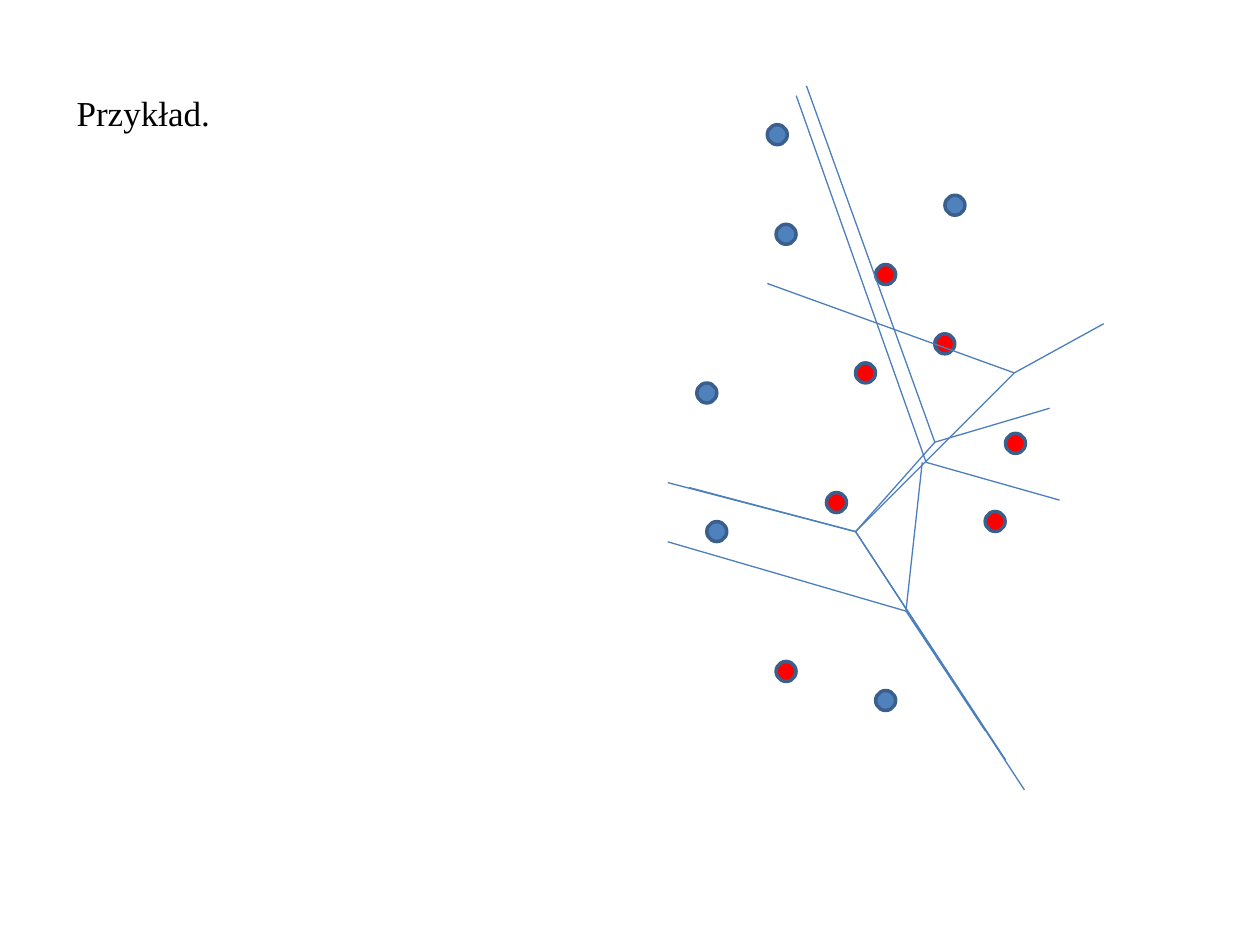
from lxml.etree import SubElement
from pptx import Presentation
from pptx.dml.color import RGBColor
from pptx.enum.shapes import MSO_CONNECTOR, MSO_SHAPE
from pptx.oxml.ns import qn
from pptx.util import Pt

BLACK = RGBColor(0x00, 0x00, 0x00)
BLUE = RGBColor(0x4F, 0x81, 0xBD)
RED = RGBColor(0xFF, 0x00, 0x00)
OUTLINE = RGBColor(0x3A, 0x5F, 0x8C)
EDGE = RGBColor(0x4B, 0x7E, 0xBC)
DOT = 11.4

BLUE_DOTS = [(438.5, 71.3), (443.5, 128.2), (398.2, 218.9),
             (403.9, 298.1), (540, 111.6), (500.4, 394.6)]
LOWER_RED_DOTS = [(443.5, 378), (472.3, 281.5), (574.6, 247.7), (563, 292.3)]
UPPER_RED_DOTS = [(488.9, 207.4), (500.4, 151.2), (534.2, 190.8)]

# Nodes where the edges of the diagrams meet
LOW = (517.7, 349.2)
CENTRE = (529.2, 264.2)
LEFT = (488.9, 303.8)
MIDDLE = (534.2, 252.7)
RIGHT = (579.6, 213.1)

FIRST_DIAGRAM = [
    ((605.5, 285.8), CENTRE),
    ((527, 264.2), LOW),
    (LOW, (381.6, 309.6)),
    ((455, 54.7), CENTRE),
    (LOW, (563, 417.6)),
]
SECOND_DIAGRAM = [
    (MIDDLE, (460.8, 49)),
    ((599.8, 233.3), MIDDLE),
    (LEFT, (393.8, 278.6)),
    ((574.6, 434.2), LEFT),
    (MIDDLE, LEFT),
]
THIRD_DIAGRAM = [
    ((630.7, 185), RIGHT),
    (LEFT, (381.6, 275.8)),
    (LEFT, (585.4, 451.4)),
    (LEFT, RIGHT),
    (RIGHT, (438.5, 162)),
]


def add_dots(shapes, corners, color):
    for x, y in corners:
        sp = shapes.add_shape(MSO_SHAPE.OVAL, Pt(x), Pt(y), Pt(DOT), Pt(DOT))
        sp.shadow.inherit = False
        sp.fill.solid()
        sp.fill.fore_color.rgb = color
        sp.line.color.rgb = OUTLINE
        sp.line.width = Pt(2)


def add_diagram(shapes, edges):
    """Draw the edges as one group of straight lines."""
    group = shapes.add_group_shape()
    for (x1, y1), (x2, y2) in edges:
        line = group.shapes.add_connector(
            MSO_CONNECTOR.STRAIGHT, Pt(x1), Pt(y1), Pt(x2), Pt(y2))
        line.line.color.rgb = EDGE
        line.line.width = Pt(0.75)
        SubElement(line._element.spPr, qn("a:effectLst"))


prs = Presentation()
prs.slide_width, prs.slide_height = Pt(720), Pt(540)
s = prs.slides.add_slide(prs.slide_layouts[6])

tf = s.shapes.add_textbox(Pt(36.7), Pt(49), Pt(311.8), Pt(51.1)).text_frame
tf.word_wrap = True
p = tf.paragraphs[0]
p.space_before = Pt(4)
pPr = p._p.get_or_add_pPr()
pPr.set("marL", str(Pt(27)))
pPr.set("indent", str(Pt(-27)))
r = p.add_run()
r.text = "Przykład."
r.font.name = "Times New Roman"
r.font.size = Pt(20)
r.font.color.rgb = BLACK

add_dots(s.shapes, BLUE_DOTS, BLUE)
add_dots(s.shapes, LOWER_RED_DOTS, RED)
add_diagram(s.shapes, FIRST_DIAGRAM)
add_dots(s.shapes, UPPER_RED_DOTS, RED)
add_diagram(s.shapes, SECOND_DIAGRAM)
add_diagram(s.shapes, THIRD_DIAGRAM)

prs.save("out.pptx")
